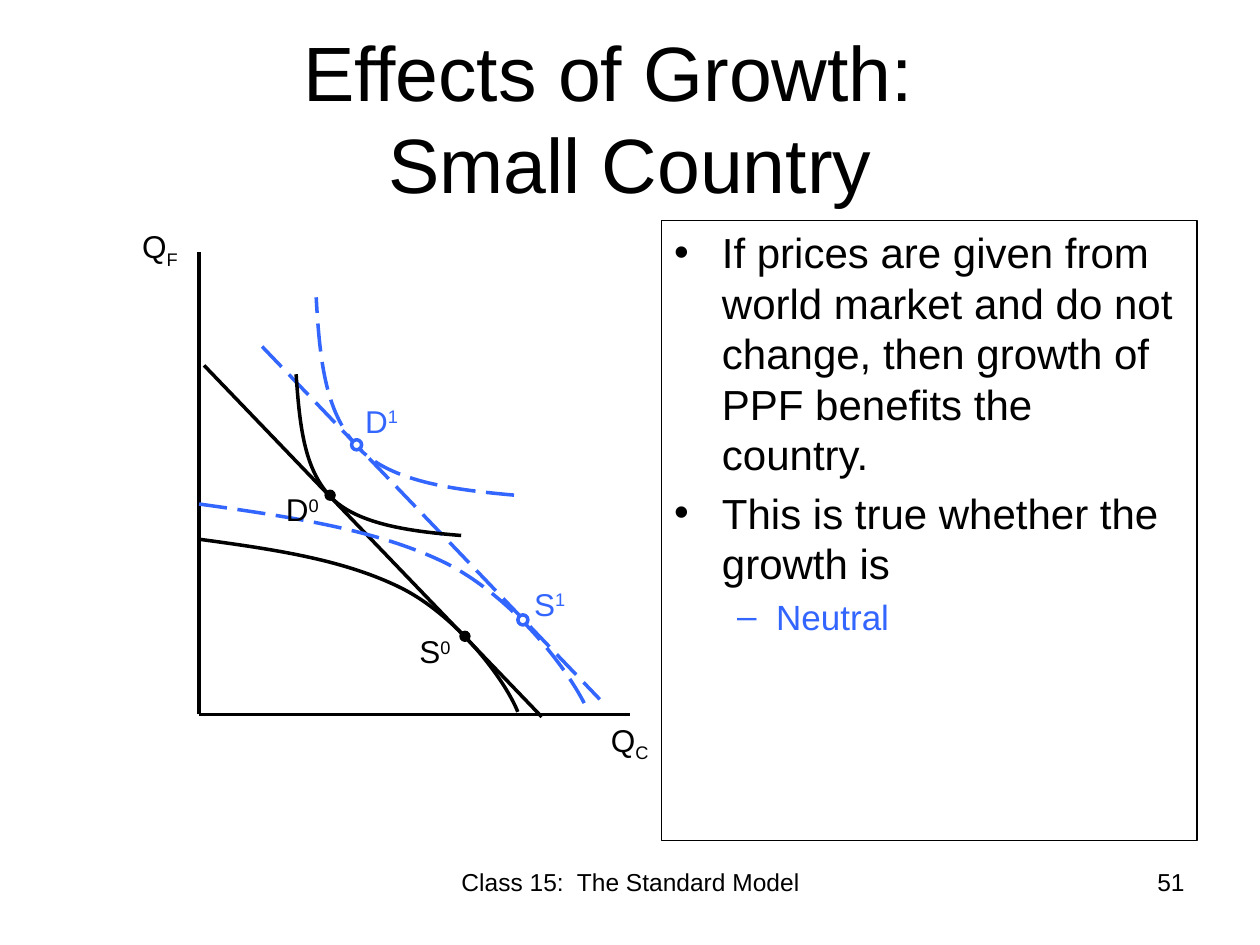
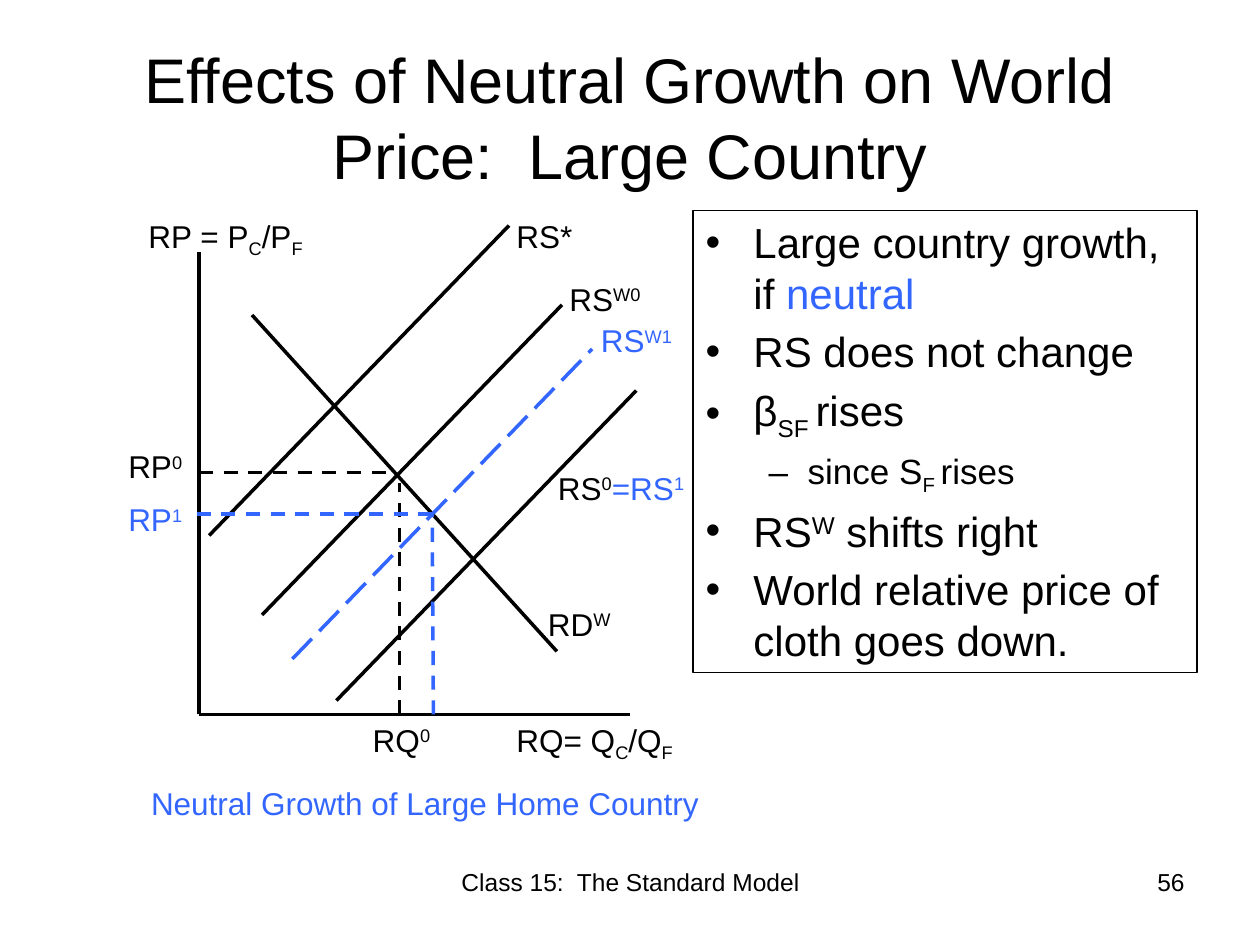
from lxml.etree import SubElement
from pptx import Presentation
from pptx.dml.color import RGBColor
from pptx.enum.dml import MSO_LINE
from pptx.enum.shapes import MSO_CONNECTOR, MSO_SHAPE
from pptx.enum.text import MSO_ANCHOR, MSO_AUTO_SIZE, PP_ALIGN
from pptx.oxml.ns import qn
from pptx.util import Inches, Pt

BLACK, BLUE, WHITE = "000000", "3366FF", "FFFFFF"
FONT = "Arial"
SUB, SUP = -25000, 30000
DASH, LONG = MSO_LINE.DASH, MSO_LINE.LONG_DASH
FOOTER = "Class 15:  The Standard Model"
WIDTH, HEIGHT = 10, 7.5
ORIGIN = (1.58, 5.67)
AXES = [(ORIGIN, (5, 5.67)), (ORIGIN, (1.58, 2))]
SUPPLY_RUN, SUPPLY_RISE = 2.38, 2.46
DOT = 0.08
LABEL_HEIGHT = 0.4
BULLETS = {0: ("•", 24, 0.38, 0.38), 1: ("–", 20, 0.81, 0.31)}


def supply(x, y):
    return (x, y), (x + SUPPLY_RUN, y - SUPPLY_RISE)


SLIDES = [
    {
        "title": ("Effects of Growth:  \vSmall Country", 44),
        "number": "51",
        "body_box": (5.25, 1.75, 4.25, 4.92),
        "body": [
            (0, ["If prices are given from world market and do not change, "
                 "then growth of PPF benefits the country."]),
            (0, ["This is true whether the growth is"]),
            (1, [("Neutral", 0, BLUE)]),
        ],
        "lines": [
            ((1.62, 2.9), (4.3, 5.69), BLACK, None),
            ((2.08, 2.75), (4.76, 5.55), BLUE, LONG),
        ],
        "curves": [
            ([(1.58, 4.28), (2.17, 4.36), (2.73, 4.44), (3.19, 4.67),
              (3.64, 4.9), (4.01, 5.4), (4.11, 5.65)], BLACK, None),
            ([(3.66, 4.25), (3.29, 4.22), (2.86, 4.17), (2.64, 3.96),
              (2.42, 3.74), (2.38, 3.41), (2.35, 2.97)], BLACK, None),
            ([(1.58, 4), (2.29, 4.1), (2.99, 4.2), (3.54, 4.47),
              (4.09, 4.75), (4.54, 5.35), (4.67, 5.65)], BLUE, LONG),
            ([(4.08, 3.93), (3.63, 3.89), (3.12, 3.83), (2.86, 3.57),
              (2.59, 3.3), (2.54, 2.9), (2.51, 2.36)], BLUE, LONG),
        ],
        "dots": [
            (2.62, 3.93, BLACK, BLACK, 0.75),
            (3.69, 5.05, BLACK, BLACK, 0.75),
            (4.15, 4.92, WHITE, BLUE, 2),
            (2.83, 3.53, WHITE, BLUE, 2),
        ],
        "labels": [
            (4.75, 5.67, 0.75, BLACK, ["Q", ("C", SUB)]),
            (1.03, 1.75, 0.75, BLACK, ["Q", ("F", SUB)]),
            (3.23, 4.97, 0.47, BLACK, ["S", ("0", SUP)]),
            (2.17, 3.84, 0.48, BLACK, ["D", ("0", SUP)]),
            (4.14, 4.59, 0.47, BLUE, ["S", ("1", SUP)]),
            (2.8, 3.14, 0.58, BLUE, ["D", ("1", SUP)]),
        ],
    },
    {
        "title": ("Effects of Neutral Growth on World Price:  Large Country", 36),
        "number": "56",
        "body_box": (5.5, 1.67, 4, 3.67),
        "body": [
            (0, ["Large country growth, if ", ("neutral", 0, BLUE)]),
            (0, ["RS does not change"]),
            (0, ["β", ("SF ", SUB), "rises"]),
            (1, ["since S", ("F ", SUB), "rises"]),
            (0, ["RS", ("W", SUP), " shifts right"]),
            (0, ["World relative price of cloth goes down."]),
        ],
        "lines": [
            (*supply(2.08, 4.88), BLACK, None),
            (*supply(2.67, 5.56), BLACK, None),
            (*supply(1.66, 4.25), BLACK, None),
            ((2, 2.5), (4.42, 5.17), BLACK, None),
            ((1.58, 3.75), (3.08, 3.75), BLACK, DASH),
            ((3.17, 5.67), (3.17, 3.83), BLACK, DASH),
            (*supply(2.32, 5.23), BLUE, LONG),
            ((1.56, 4.08), (3.46, 4.08), BLUE, DASH),
            ((3.44, 5.67), (3.43, 4.07), BLUE, DASH),
        ],
        "curves": [],
        "dots": [],
        "labels": [
            (1.08, 1.67, 1.51, BLACK, ["RP = P", ("C", SUB), "/P", ("F", SUB)]),
            (4, 5.67, 1.5, BLACK, ["RQ= Q", ("C", SUB), "/Q", ("F", SUB)]),
            (4.42, 2.17, 0.81, BLACK, ["RS", ("W0", SUP)]),
            (4.33, 3.67, 1.24, BLACK,
             ["RS", ("0", SUP), ("=RS", 0, BLUE), ("1", SUP, BLUE)]),
            (4, 1.67, 0.65, BLACK, ["RS*"]),
            (0.92, 3.5, 0.67, BLACK, ["RP", ("0", SUP)]),
            (2.86, 5.67, 0.72, BLACK, ["RQ", ("0", SUP)]),
            (0.92, 3.92, 0.67, BLUE, ["RP", ("1", SUP)]),
            (4.67, 2.5, 0.81, BLUE, ["RS", ("W1", SUP)]),
            (1.1, 6.17, 4.58, BLUE, ["Neutral Growth of Large Home Country"]),
            (4.25, 4.75, 0.73, BLACK, ["RD", ("W", SUP)]),
        ],
    },
]


def rgb(color):
    return RGBColor.from_string(color)


def inches(*values):
    return [Inches(v) for v in values]


def place(sp, box):
    sp.left, sp.top, sp.width, sp.height = inches(*box)


def style_font(font, size, color):
    font.name, font.size = FONT, Pt(size)
    font.color.rgb = rgb(color)


def style_line(line, color, width=2, dash=None):
    line.color.rgb = rgb(color)
    line.width = Pt(width)
    if dash is not None:
        line.dash_style = dash


def add_run(p, size, color, text, base=0, tint=None):
    r = p.add_run()
    r.text = text
    style_font(r.font, size, tint or color)
    if base:
        r._r.get_or_add_rPr().set("baseline", str(base))


def add_runs(p, parts, size, color=BLACK):
    for part in parts:
        add_run(p, size, color, *([part] if isinstance(part, str) else part))


def add_text(slide, box, parts, size, color=BLACK, align=PP_ALIGN.LEFT):
    sp = slide.shapes.add_textbox(*inches(*box))
    tf = sp.text_frame
    tf.word_wrap = True
    p = tf.paragraphs[0]
    p.alignment = align
    add_runs(p, parts, size, color)


def add_title(slide, text, size):
    sp = slide.shapes.title
    place(sp, (0.5, 0.3, WIDTH - 1, 1.25))
    tf = sp.text_frame
    tf.text = text
    tf.auto_size = MSO_AUTO_SIZE.NONE
    tf.vertical_anchor = MSO_ANCHOR.MIDDLE
    p = tf.paragraphs[0]
    p.alignment = PP_ALIGN.CENTER
    for r in p.runs:
        style_font(r.font, size, BLACK)


def add_body(slide, box, items):
    sp = slide.placeholders[1]
    place(sp, box)
    style_line(sp.line, BLACK, 0.75)
    tf = sp.text_frame
    tf.auto_size = MSO_AUTO_SIZE.NONE
    tf.vertical_anchor = MSO_ANCHOR.TOP
    for i, (level, parts) in enumerate(items):
        p = tf.paragraphs[0] if i == 0 else tf.add_paragraph()
        mark, size, margin, hang = BULLETS[level]
        p.level = level
        p.space_before = Pt(size * 0.2)
        pPr = p._p.get_or_add_pPr()
        pPr.set("marL", str(Inches(margin)))
        pPr.set("indent", str(-Inches(hang)))
        SubElement(pPr, qn("a:buFont")).set("typeface", FONT)
        SubElement(pPr, qn("a:buChar")).set("char", mark)
        add_runs(p, parts, size)


def add_line(slide, start, end, color=BLACK, dash=None):
    cxn = slide.shapes.add_connector(MSO_CONNECTOR.STRAIGHT, *inches(*start, *end))
    style_line(cxn.line, color, dash=dash)
    SubElement(cxn._element.spPr, qn("a:effectLst"))


def add_curve(slide, knots, color, dash):
    start, *rest = [inches(*knot) for knot in knots]
    builder = slide.shapes.build_freeform(*start)
    builder.add_line_segments(rest, close=False)
    sp = builder.convert_to_shape()
    outline = next(sp._element.iter(qn("a:path")))
    segments = outline.findall(qn("a:lnTo"))
    for i in range(0, len(segments), 3):
        bezier = SubElement(outline, qn("a:cubicBezTo"))
        for segment in segments[i:i + 3]:
            bezier.append(segment[0])
            outline.remove(segment)
    sp.shadow.inherit = False
    sp.fill.background()
    style_line(sp.line, color, dash=dash)


def add_dot(slide, x, y, fill, color, width):
    box = (x - DOT / 2, y - DOT / 2, DOT, DOT)
    sp = slide.shapes.add_shape(MSO_SHAPE.OVAL, *inches(*box))
    sp.shadow.inherit = False
    sp.fill.solid()
    sp.fill.fore_color.rgb = rgb(fill)
    style_line(sp.line, color, width)


def build_slide(prs, content):
    slide = prs.slides.add_slide(prs.slide_layouts[1])
    add_title(slide, *content["title"])
    add_body(slide, content["body_box"], content["body"])
    for line in AXES + content["lines"]:
        add_line(slide, *line)
    for curve in content["curves"]:
        add_curve(slide, *curve)
    for dot in content["dots"]:
        add_dot(slide, *dot)
    for x, y, w, color, parts in content["labels"]:
        add_text(slide, (x, y, w, LABEL_HEIGHT), parts, 18, color)
    add_text(slide, (3.42, 6.83, 3.17, 0.52), [FOOTER], 14, align=PP_ALIGN.CENTER)
    add_text(slide, (7.17, 6.83, 2.33, 0.52), [content["number"]], 14, align=PP_ALIGN.RIGHT)


def main():
    prs = Presentation()
    prs.slide_width, prs.slide_height = inches(WIDTH, HEIGHT)
    for content in SLIDES:
        build_slide(prs, content)
    prs.save("out.pptx")


if __name__ == "__main__":
    main()
